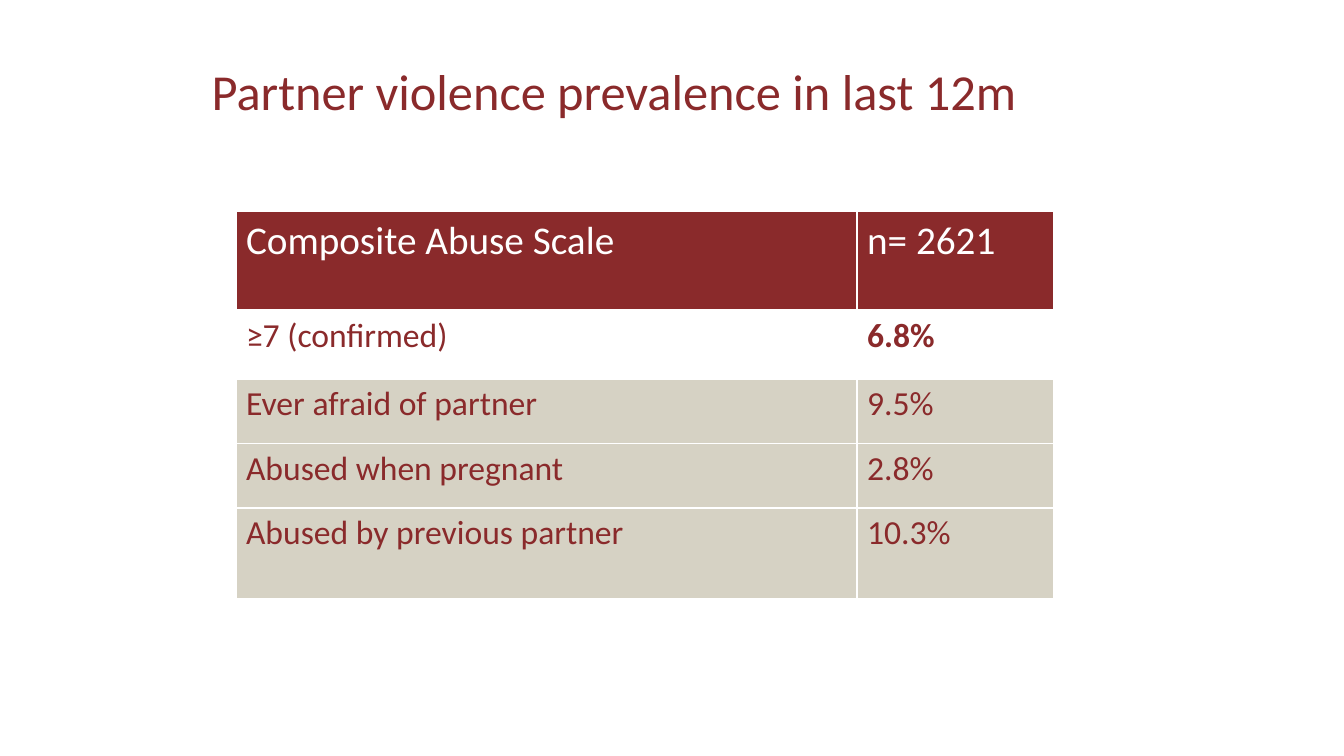
import pptx
import pptx.dml.color
import pptx.enum.text
import pptx.oxml.ns
import pptx.util
from lxml import etree

RED = pptx.dml.color.RGBColor(0x8A, 0x2A, 0x2B)
STONE = pptx.dml.color.RGBColor(0xD6, 0xD2, 0xC4)
WHITE = pptx.dml.color.RGBColor(0xFF, 0xFF, 0xFF)
FONT = "Calibri"

COLUMN_WIDTHS = (6.16, 1.95)
# Label, value, row height, fill, text colour, text size, bold value
ROWS = (
    ("Composite Abuse Scale", "n= 2621", 0.98, RED, WHITE, 28, False),
    ("≥7 (confirmed)", "6.8%", 0.68, WHITE, RED, 24, True),
    ("Ever afraid of partner", "9.5%", 0.64, STONE, RED, 24, False),
    ("Abused when pregnant", "2.8%", 0.64, STONE, RED, 24, False),
    ("Abused by previous partner", "10.3%", 0.9, STONE, RED, 24, False),
)


def inches(*lengths):
    return [pptx.util.Inches(length) for length in lengths]


def add_span(frame, text, size, color, bold=False):
    span = frame.paragraphs[0].add_run()
    span.text = text
    span.font.name = FONT
    span.font.size = pptx.util.Pt(size)
    span.font.bold = bold
    span.font.color.rgb = color


def add_title(page, text):
    box = page.shapes.add_textbox(*inches(2.1, 0.6, 9, 0.93))
    frame = box.text_frame
    frame.word_wrap = True
    frame.vertical_anchor = pptx.enum.text.MSO_ANCHOR.TOP
    frame.margin_left = frame.margin_right = 0
    frame.margin_top = frame.margin_bottom = 0
    add_span(frame, text, 36, RED)


def set_borders(cell, widths):
    """Draw white cell edges; widths maps each edge tag to points."""
    properties = cell._tc.get_or_add_tcPr()
    for position, (edge, points) in enumerate(widths.items()):
        line = etree.Element(pptx.oxml.ns.qn("a:" + edge), w=str(pptx.util.Pt(points)))
        fill = etree.SubElement(line, pptx.oxml.ns.qn("a:solidFill"))
        etree.SubElement(fill, pptx.oxml.ns.qn("a:srgbClr"), val=str(WHITE))
        properties.insert(position, line)


def add_prevalence_table(page):
    heights = [row[2] for row in ROWS]
    frame = page.shapes.add_table(
        len(ROWS), len(COLUMN_WIDTHS),
        *inches(2.34, 2.1, sum(COLUMN_WIDTHS), sum(heights)))
    table = frame.table
    for column, width in zip(table.columns, COLUMN_WIDTHS):
        column.width = pptx.util.Inches(width)

    for index, (label, value, height, fill, color, size, bold) in enumerate(ROWS):
        table.rows[index].height = pptx.util.Inches(height)
        # The rule under the header is heavier than the others
        borders = {"lnL": 1, "lnR": 1,
                   "lnT": 3 if index == 1 else 1,
                   "lnB": 3 if index == 0 else 1}
        for cell, text, strong in zip(table.rows[index].cells, (label, value), (False, bold)):
            cell.fill.solid()
            cell.fill.fore_color.rgb = fill
            add_span(cell.text_frame, text, size, color, strong)
            set_borders(cell, borders)


def main():
    deck = pptx.Presentation()
    deck.slide_width, deck.slide_height = inches(13.33, 7.5)
    page = deck.slides.add_slide(deck.slide_layouts[6])
    add_title(page, "Partner violence prevalence in last 12m")
    add_prevalence_table(page)
    deck.save("out.pptx")


if __name__ == "__main__":
    main()
